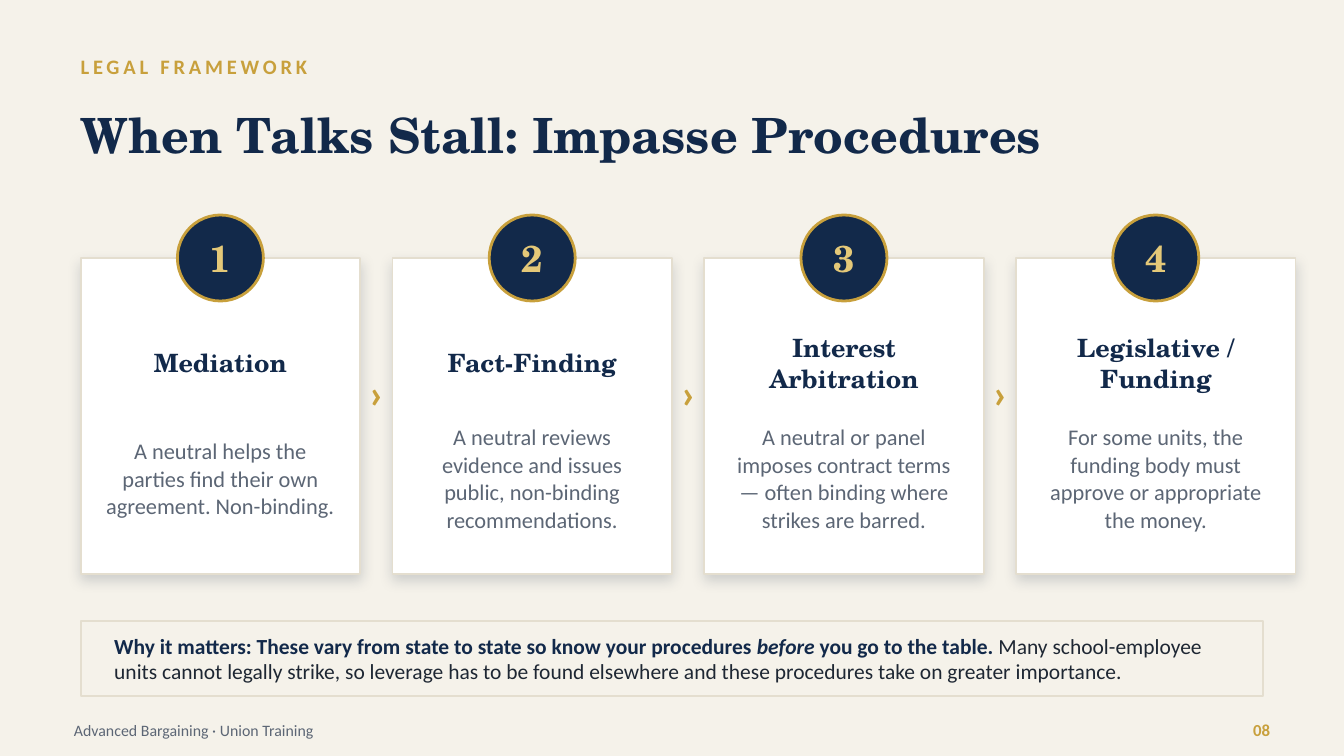
from dataclasses import dataclass

from lxml.etree import SubElement
from pptx import Presentation
from pptx.dml.color import RGBColor
from pptx.enum.shapes import MSO_SHAPE
from pptx.enum.text import MSO_ANCHOR, MSO_AUTO_SIZE, PP_ALIGN
from pptx.oxml.ns import qn
from pptx.util import Inches, Pt


@dataclass(frozen=True)
class Theme:
    # Colours
    paper: str = "F5F2EA"
    white: str = "FFFFFF"
    navy: str = "12294A"
    gold: str = "C8A03C"
    pale: str = "E4C878"
    edge: str = "E4DECF"
    gray: str = "5C6675"
    ink: str = "1E2733"
    shade: str = "0C1D36"
    # Fonts
    serif: str = "TeX Gyre Schola"
    sans: str = "Calibri"
    # Type sizes
    title: float = 26
    arrow: float = 22
    digit: float = 20
    head: float = 13.5
    body: float = 12
    note: float = 11.5
    label: float = 11
    page: float = 9
    foot: float = 8.5


T = Theme()

STEPS = [
    ("Mediation",
     "A neutral helps the parties find their own agreement. Non-binding."),
    ("Fact-Finding",
     "A neutral reviews evidence and issues public, non-binding recommendations."),
    ("Interest Arbitration",
     "A neutral or panel imposes contract terms — often binding where strikes are barred."),
    ("Legislative / Funding",
     "For some units, the funding body must approve or appropriate the money."),
]

# Text, colour, bold, italic
NOTE = [
    ("Why it matters: These vary from state to state so know your procedures ",
     T.navy, True, False),
    ("before", T.navy, True, True),
    (" you go to the table. ", T.navy, True, False),
    ("Many school-employee units cannot legally strike, so leverage has to be "
     "found elsewhere and these procedures take on greater importance.",
     T.ink, False, False),
]

# Card grid
LEFT, TOP, WIDE, HIGH, GAP = 0.6, 1.92, 2.08, 2.35, 0.24
DISC = 0.64


def color(code):
    return RGBColor.from_string(code)


def frame(shape, side=0):
    """Prepare a text frame and return its first paragraph."""
    text = shape.text_frame
    text.auto_size = MSO_AUTO_SIZE.NONE
    text.word_wrap = True
    text.vertical_anchor = MSO_ANCHOR.MIDDLE
    text.margin_left = text.margin_right = Inches(side)
    text.margin_top = text.margin_bottom = 0
    return text.paragraphs[0]


def style(para, size, tint, face=T.sans, bold=False, align=PP_ALIGN.LEFT):
    para.alignment = align
    font = para.font
    font.name, font.size, font.bold = face, Pt(size), bold
    font.color.rgb = color(tint)


def write(shape, text, *args, **kwargs):
    para = frame(shape)
    para.text = text
    style(para, *args, **kwargs)
    return para


def label(slide, box, text, *args, **kwargs):
    shape = slide.shapes.add_textbox(*map(Inches, box))
    return write(shape, text, *args, **kwargs)


def panel(slide, kind, box, fill, line, width=1):
    shape = slide.shapes.add_shape(kind, *map(Inches, box))
    shape.shadow.inherit = False
    shape.fill.solid()
    shape.fill.fore_color.rgb = color(fill)
    shape.line.color.rgb = color(line)
    shape.line.width = Pt(width)
    return shape


def shade(shape):
    """Add a soft shadow that falls straight down."""
    effects = shape._element.spPr.find(qn("a:effectLst"))
    outer = SubElement(effects, qn("a:outerShdw"), blurRad=str(Pt(7)),
                       dist=str(Pt(3)), dir="5400000", algn="bl",
                       rotWithShape="0")
    tint = SubElement(outer, qn("a:srgbClr"), val=T.shade)
    SubElement(tint, qn("a:alpha"), val="16000")


def card(slide, x, num, head, body):
    mid = PP_ALIGN.CENTER
    shade(panel(slide, MSO_SHAPE.RECTANGLE, (x, TOP, WIDE, HIGH),
                T.white, T.edge))

    # Number disc on the top edge
    disc = panel(slide, MSO_SHAPE.OVAL,
                 (x + (WIDE - DISC) / 2, TOP - DISC / 2, DISC, DISC),
                 T.navy, T.gold, 1.5)
    write(disc, str(num), T.digit, T.pale, T.serif, True, mid)

    # Heading and description
    label(slide, (x + 0.14, 2.4, WIDE - 0.28, 0.6), head,
          T.head, T.navy, T.serif, True, mid)
    para = label(slide, (x + 0.16, 2.98, WIDE - 0.32, 1.15), body,
                 T.body, T.gray, align=mid)
    para.line_spacing = 1.03


def note(slide):
    box = panel(slide, MSO_SHAPE.RECTANGLE, (LEFT, 4.62, 8.8, 0.56),
                T.paper, T.edge)
    para = frame(box, 0.25)
    style(para, T.note, T.ink)
    for text, tint, bold, slant in NOTE:
        run = para.add_run()
        run.text = text
        run.font.bold, run.font.italic = bold, slant
        run.font.color.rgb = color(tint)


def main():
    # Widescreen, 16 to 9
    deck = Presentation()
    deck.slide_width = Inches(10)
    deck.slide_height = Inches(10 * 9 / 16)
    slide = deck.slides.add_slide(deck.slide_layouts[5])
    slide.background.fill.solid()
    slide.background.fill.fore_color.rgb = color(T.paper)

    # Header
    para = label(slide, (LEFT, 0.34, 8.8, 0.3), "LEGAL FRAMEWORK",
                 T.label, T.gold, bold=True)
    para.font._rPr.set("spc", "200")
    title = slide.shapes.title
    title.left, title.top = Inches(LEFT), Inches(0.62)
    title.width, title.height = Inches(8.8), Inches(0.75)
    write(title, "When Talks Stall: Impasse Procedures",
          T.title, T.navy, T.serif, True)

    # Steps, with a chevron in each gap
    for i, (head, body) in enumerate(STEPS):
        x = LEFT + i * (WIDE + GAP)
        card(slide, x, i + 1, head, body)
        if i < len(STEPS) - 1:
            label(slide, (x + WIDE - 0.02, 2.62, GAP + 0.04, 0.6), "›",
                  T.arrow, T.gold, bold=True, align=PP_ALIGN.CENTER)

    # Note and footer
    note(slide)
    label(slide, (0.55, 5.28, 6.5, 0.3), "Advanced Bargaining · Union Training",
          T.foot, T.gray)
    label(slide, (9, 5.28, 0.45, 0.3), "08", T.page, T.gold,
          bold=True, align=PP_ALIGN.RIGHT)

    deck.save("out.pptx")


if __name__ == "__main__":
    main()
